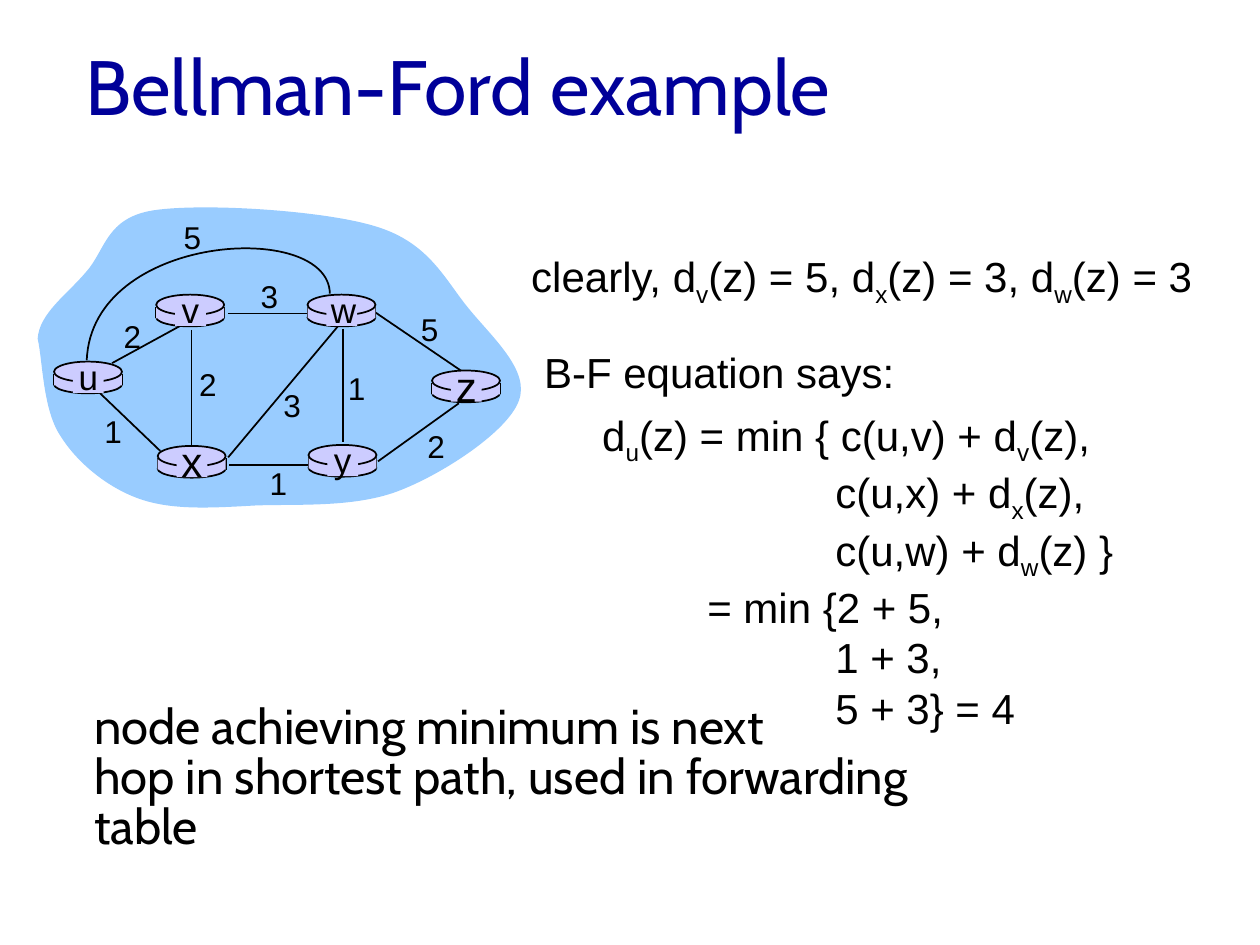
from lxml.etree import SubElement
from pptx import Presentation
from pptx.dml.color import RGBColor
from pptx.enum.shapes import MSO_CONNECTOR, MSO_SHAPE
from pptx.enum.text import MSO_ANCHOR, PP_ALIGN
from pptx.oxml.ns import qn
from pptx.oxml.xmlchemy import OxmlElement
from pptx.util import Cm, Pt

COLORS = {
    name: RGBColor.from_string(value)
    for name, value in {
        "title": "000099",
        "black": "000000",
        "cloud": "99CCFF",
        "router": "CCCCFF",
    }.items()
}


def add_text(left, top, width, height, lines, size, font="Arial", align=PP_ALIGN.LEFT):
    """Add a text box; the letter after an underscore becomes a subscript."""
    box = slide.shapes.add_textbox(Cm(left), Cm(top), Cm(width), Cm(height))
    frame = box.text_frame
    frame.word_wrap = align == PP_ALIGN.LEFT
    for index, line in enumerate(lines):
        paragraph = frame.paragraphs[0] if index == 0 else frame.add_paragraph()
        paragraph.alignment = align
        first, *rest = line.split("_")
        pieces = [(first, False)]
        for part in rest:
            pieces += [(part[0], True), (part[1:], False)]
        for text, is_subscript in pieces:
            run = paragraph.add_run()
            run.text = text
            run.font.name = font
            run.font.size = Pt(size)
            run.font.color.rgb = COLORS["black"]
            if is_subscript:
                run.font._element.set("baseline", "-25000")
    return frame


def add_curve(points, close):
    """Draw a Bezier path: a start point, then three points per segment."""
    start, *others = [(Cm(x), Cm(y)) for x, y in points]
    builder = slide.shapes.build_freeform(*start)
    builder.add_line_segments(others, close=close)
    shape = builder.convert_to_shape()
    shape.shadow.inherit = False
    path = shape._element.find(".//" + qn("a:path"))
    segments = path.findall(qn("a:lnTo"))
    for index in range(0, len(segments), 3):
        curve = OxmlElement("a:cubicBezTo")
        segments[index].addprevious(curve)
        for segment in segments[index:index + 3]:
            curve.append(segment[0])
            path.remove(segment)
    return shape


presentation = Presentation()
presentation.slide_width = Cm(25.4)
presentation.slide_height = Cm(19.05)
slide = presentation.slides.add_slide(presentation.slide_layouts[5])

# Title
title = slide.shapes.title
title.left, title.top, title.width, title.height = Cm(1.47), Cm(0.48), Cm(21.59), Cm(2.44)
title.text_frame.text = "Bellman-Ford example"
title.text_frame.vertical_anchor = MSO_ANCHOR.MIDDLE
paragraph = title.text_frame.paragraphs[0]
paragraph.alignment = PP_ALIGN.LEFT
font = paragraph.runs[0].font
font.name, font.size = "Cabin", Pt(44)
font.color.rgb = COLORS["title"]

# Network cloud
cloud = add_curve([
    (0.76, 6.83),
    (0.79, 6.32), (1.35, 5.94), (1.73, 5.49),
    (2.13, 5.05), (2.13, 4.39), (3.1, 4.24),
    (4.09, 4.09), (6.55, 4.24), (7.59, 4.57),
    (8.66, 4.9), (8.97, 5.64), (9.45, 6.22),
    (9.93, 6.81), (10.69, 7.47), (10.46, 8.08),
    (10.24, 8.69), (8.97, 9.53), (8.08, 9.88),
    (7.19, 10.24), (6.02, 10.16), (5.16, 10.19),
    (4.27, 10.24), (3.48, 10.29), (2.82, 10.06),
    (2.16, 9.83), (1.55, 9.32), (1.22, 8.79),
    (0.86, 8.26), (0.86, 7.24), (0.76, 6.83),
], close=True)
cloud.fill.solid()
cloud.fill.fore_color.rgb = COLORS["cloud"]
cloud.line.fill.background()

# Links, followed by the sides of each router: start, end
links = [
    ((2.26, 7.32), (3.76, 6.5)),
    ((6.91, 6.63), (6.91, 8.92)),
    ((3.86, 6.65), (3.86, 9.02)),
    ((4.6, 9.22), (6.81, 6.58)),
    ((7.62, 9.3), (9.25, 8.13)),
    ((6.22, 9.37), (4.62, 9.37)),
    ((3.23, 9.09), (2.01, 7.92)),
    ((6.2, 6.32), (4.6, 6.32)),
    ((9.32, 7.49), (7.57, 6.3)),
]
# Router name, left and top of its rim, size of its name
routers = [
    ("u", 1.09, 7.29, 20),
    ("x", 3.18, 8.99, 24),
    ("v", 3.15, 5.94, 20),
    ("w", 6.2, 5.94, 20),
    ("y", 6.22, 8.97, 20),
    ("z", 8.71, 7.47, 24),
]
router_width = 1.37
sides = [
    ((x, top + 0.25), (x, top + 0.48))
    for _, left, top, _ in routers
    for x in (left, left + router_width)
]
for start, end in links + sides:
    connector = slide.shapes.add_connector(
        MSO_CONNECTOR.STRAIGHT, *map(Cm, start), *map(Cm, end))
    connector.line.color.rgb = COLORS["black"]
    connector.line.width = Pt(1)
    SubElement(connector._element.spPr, qn("a:effectLst"))

outer_link = add_curve([(6.65, 5.92), (6.63, 4.42), (1.85, 4.7), (1.75, 7.26)], close=False)
outer_link.fill.background()
outer_link.line.color.rgb = COLORS["black"]
outer_link.line.width = Pt(1)

# Routers: base, body, rim and a patch behind the name
router_parts = [
    (MSO_SHAPE.OVAL, 0, 0.28, router_width, 0.36, True),
    (MSO_SHAPE.RECTANGLE, 0, 0.25, router_width, 0.23, False),
    (MSO_SHAPE.OVAL, 0, 0, router_width, 0.41, True),
    (MSO_SHAPE.RECTANGLE, 0.38, 0.05, 0.62, 0.58, False),
]
for name, left, top, size in routers:
    for kind, dx, dy, width, height, outlined in router_parts:
        part = slide.shapes.add_shape(kind, Cm(left + dx), Cm(top + dy), Cm(width), Cm(height))
        part.shadow.inherit = False
        part.fill.solid()
        part.fill.fore_color.rgb = COLORS["router"]
        if outlined:
            part.line.color.rgb = COLORS["black"]
            part.line.width = Pt(1)
        else:
            part.line.fill.background()
    name_height = 1.09 if size == 20 else 1.27
    add_text(left + 0.22, top + 0.3 - name_height / 2, 0.94, name_height, [name], size,
             align=PP_ALIGN.CENTER)

# Link costs
costs = [
    ("2", 2.24, 6.27), ("2", 3.76, 7.24), ("1", 1.85, 8.18), ("3", 5.46, 7.65),
    ("1", 5.18, 9.22), ("1", 6.76, 7.32), ("2", 8.36, 8.48), ("5", 8.23, 6.12),
    ("3", 5, 5.46), ("5", 3.45, 4.27),
]
for cost, left, top in costs:
    add_text(left, top, 0.86, 1.02, [cost], 18, align=PP_ALIGN.CENTER)

# Equations
add_text(10.46, 4.93, 14.5, 1.27, ["clearly, d_v(z) = 5, d_x(z) = 3, d_w(z) = 3"], 24)
equation = [
    ("d_u(z) = min { c(u,v) + d_v(z),", 0),
    ("c(u,x) + d_x(z),", 4.7),
    ("c(u,w) + d_w(z) }", 4.7),
    ("= min {2 + 5,", 2.12),
    ("1 + 3,", 4.7),
    ("5 + 3} = 4", 4.7),
]
frame = add_text(11.89, 8.13, 11.2, 6.35, [line for line, _ in equation], 24)
for paragraph, (_, indent) in zip(frame.paragraphs, equation):
    paragraph._p.get_or_add_pPr().set("marL", str(Cm(indent)))

# Conclusion
frame = add_text(1.65, 14.07, 18.8, 2.29, [
    "node achieving minimum is next",
    "hop in shortest path, used in forwarding table",
], 28, font="Cabin")
for paragraph in frame.paragraphs:
    paragraph.line_spacing = 0.85

add_text(10.72, 6.86, 8, 1.27, ["B-F equation says:"], 24)

presentation.save("out.pptx")
